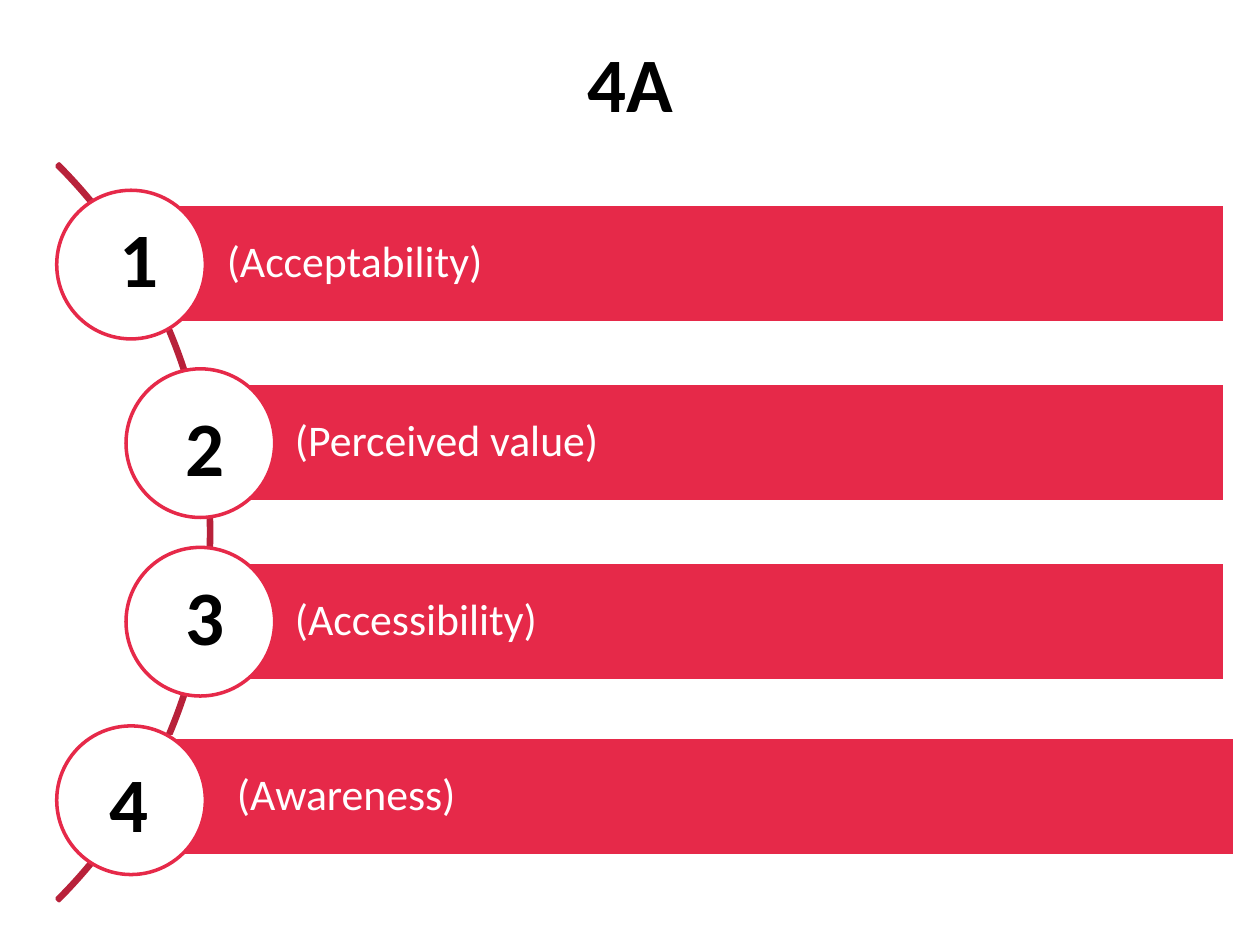
"""Build the 4A slide: four numbered bars along an arc."""
from pptx import Presentation
from pptx.dml.color import RGBColor
from pptx.enum import shapes, text
from pptx.util import Inches, Pt

COLORS = {"red": "E62949", "arc": "B8213A", "white": "FFFFFF", "black": "000000"}
BAR_H, CIRCLE = 0.94, 1.18
ROWS = [
    ("1", "(Acceptability)", 1.05, 1.62, 8.67, 0.45, 0.75, 1.62),
    ("2", "(Perceived value)", 1.59, 3.04, 8.13, 1.0, 1.27, 3.12),
    ("3", "(Accessibility)", 1.59, 4.46, 8.13, 1.0, 1.27, 4.46),
    ("4", "(Awareness)", 1.13, 5.85, 8.67, 0.45, 0.67, 5.95),
]


def add_shape(kind, x, y, w, h, fill, line):
    sp = s.shapes.add_shape(kind, Inches(x), Inches(y), Inches(w), Inches(h))
    sp.shadow.inherit = False
    if fill:
        sp.fill.solid()
        sp.fill.fore_color.rgb = RGBColor.from_string(COLORS[fill])
    else:
        sp.fill.background()
    sp.line.color.rgb = RGBColor.from_string(COLORS[line])
    sp.line.width = Pt(2)
    return sp


def write(sp, words, size, color, align, bold=False):
    tf = sp.text_frame
    tf.word_wrap = True
    p = tf.paragraphs[0]
    p.text = words
    p.alignment = align
    p.font.name = "Calibri"
    p.font.size = Pt(size)
    p.font.bold = bold
    p.font.color.rgb = RGBColor.from_string(COLORS[color])
    return tf


prs = Presentation()
prs.slide_width, prs.slide_height = Inches(10), Inches(7.5)
s = prs.slides.add_slide(prs.slide_layouts[6])

title = s.shapes.add_textbox(0, 0, Inches(10), Inches(1.29))
tf = write(title, "4A", 44, "black", text.PP_ALIGN.CENTER, True)
tf.vertical_anchor = text.MSO_ANCHOR.MIDDLE

arc = add_shape(shapes.MSO_SHAPE.BLOCK_ARC, -6.59, 0.09, 8.27, 8.27, None, "arc")
for i, value in enumerate((189, 27, 0.003)):
    arc.adjustments[i] = value

for number, label, x, y, w, circle_x, number_x, number_y in ROWS:
    bar = add_shape(shapes.MSO_SHAPE.RECTANGLE, x, y, w, BAR_H, "red", "white")
    tf = write(bar, label, 25, "white", text.PP_ALIGN.LEFT)
    tf.vertical_anchor = text.MSO_ANCHOR.MIDDLE
    tf.margin_left = Inches(0.75)
    tf.margin_top = tf.margin_right = tf.margin_bottom = Inches(0.07)
    tf.paragraphs[0].line_spacing = 0.9

    circle_y = 1.51 + (int(number) - 1) * 1.417
    add_shape(shapes.MSO_SHAPE.OVAL, circle_x, circle_y, CIRCLE, CIRCLE, "white", "red")

for number, *_, number_x, number_y in ROWS:
    box = s.shapes.add_textbox(Inches(number_x), Inches(number_y), Inches(0.71), Inches(0.84))
    tf = write(box, number, 44, "black", text.PP_ALIGN.CENTER, True)
    tf.auto_size = text.MSO_AUTO_SIZE.SHAPE_TO_FIT_TEXT

prs.save("out.pptx")
